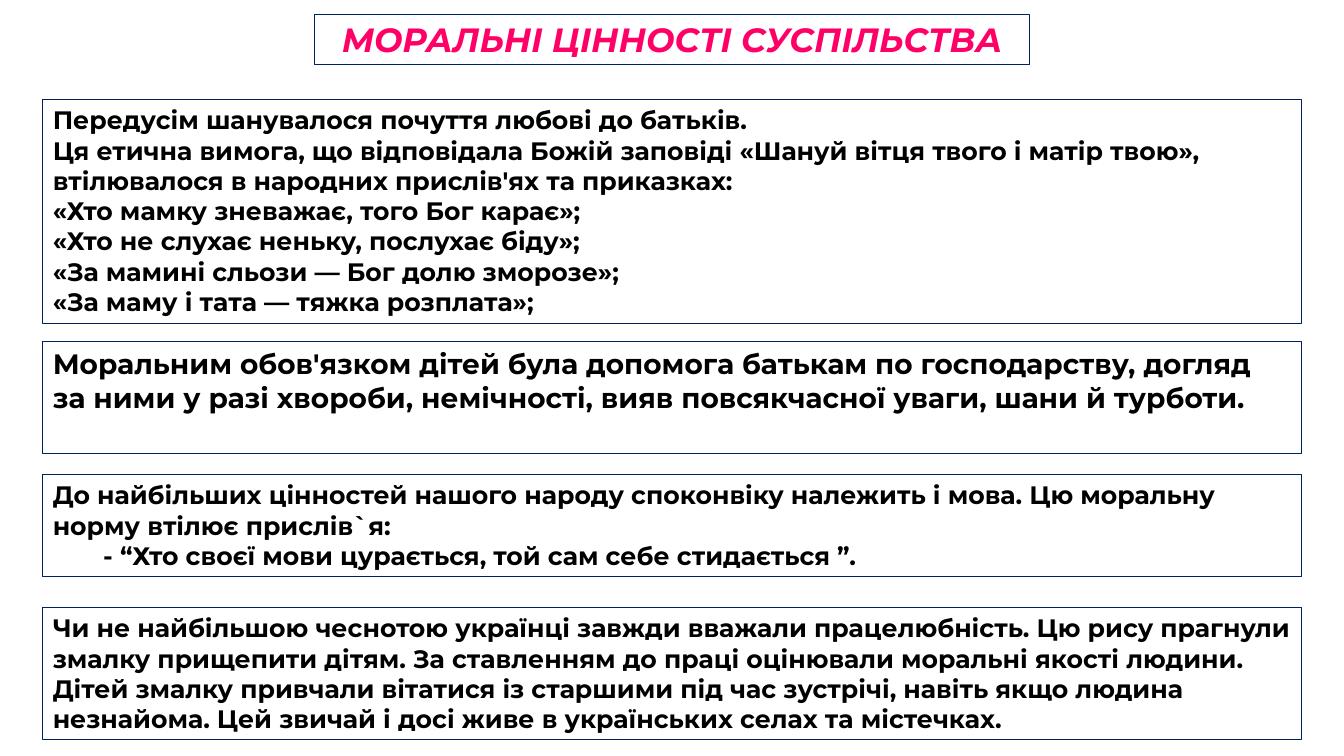
import pptx
import pptx.util
import pptx.dml.color
import pptx.enum.shapes
import pptx.enum.text

COLORS = {"paper": "FFFFFF", "border": "002060", "title": "FF0066", "text": "000000"}
FONT = "Montserrat"
SLIDE_W, SLIDE_H = 13.33, 7.5
QUOTE_INDENT = 0.5

TITLE = "МОРАЛЬНІ ЦІННОСТІ СУСПІЛЬСТВА"
TITLE_TOP, TITLE_W, TITLE_H = 0.14, 7.09, 0.5
PANEL_W = 12.48

# top, height, text size, paragraphs as (text, left indent)
PANELS = [
    (0.99, 2.22, 18, [
        ("Передусім шанувалося почуття любові до батьків.", 0),
        ("Ця етична вимога, що відповідала Божій заповіді «Шануй вітця твого і матір твою», "
         "втілювалося в народних прислів'ях та приказках:", 0),
        ("«Хто мамку зневажає, того Бог карає»;", 0),
        ("«Хто не слухає неньку, послухає біду»;", 0),
        ("«За мамині сльози — Бог долю зморозе»;", 0),
        ("«За маму і тата — тяжка розплата»;", 0),
    ]),
    (3.39, 1.11, 20, [
        ("Моральним обов'язком дітей була допомога батькам по господарству, догляд за ними "
         "у разі хвороби, немічності, вияв повсякчасної уваги, шани й турботи.", 0),
    ]),
    (4.71, 1.01, 18, [
        ("До найбільших цінностей нашого народу споконвіку належить і мова. "
         "Цю моральну норму втілює прислів`я:", 0),
        ("- “Хто своєї мови цурається, той сам себе стидається ”.", QUOTE_INDENT),
    ]),
    (6.03, 1.31, 18, [
        ("Чи не найбільшою чеснотою українці завжди вважали працелюбність. Цю рису прагнули "
         "змалку прищепити дітям. За ставленням до праці оцінювали моральні якості людини. "
         "Дітей змалку привчали вітатися із старшими під час зустрічі, навіть якщо людина "
         "незнайома. Цей звичай і досі живе в українських селах та містечках.", 0),
    ]),
]


def rgb(name):
    return pptx.dml.color.RGBColor.from_string(COLORS[name])


def add_text(tf, paragraphs, size, color="text", italic=False, align="LEFT"):
    for i, (text, indent) in enumerate(paragraphs):
        p = tf.paragraphs[0] if i == 0 else tf.add_paragraph()
        p.alignment = getattr(pptx.enum.text.PP_ALIGN, align)
        if indent:
            p._p.get_or_add_pPr().set("marL", str(pptx.util.Inches(indent)))
        r = p.add_run()
        r.text = text
        r.font.name = FONT
        r.font.size = pptx.util.Pt(size)
        r.font.bold = True
        r.font.italic = italic
        r.font.color.rgb = rgb(color)


def add_panel(slide, top, width, height, wrap=True):
    """Add a bordered box centred across the slide and return its text frame."""
    left = (SLIDE_W - width) / 2
    sp = slide.shapes.add_shape(
        pptx.enum.shapes.MSO_SHAPE.RECTANGLE,
        *(pptx.util.Inches(v) for v in (left, top, width, height)))
    sp.shadow.inherit = False
    sp.fill.solid()
    sp.fill.fore_color.rgb = rgb("paper")
    sp.line.color.rgb = rgb("border")
    sp.line.width = pptx.util.Pt(0.75)
    tf = sp.text_frame
    tf.word_wrap = wrap
    tf.vertical_anchor = pptx.enum.text.MSO_ANCHOR.TOP
    return tf


def main():
    prs = pptx.Presentation()
    prs.slide_width = pptx.util.Inches(SLIDE_W)
    prs.slide_height = pptx.util.Inches(SLIDE_H)
    slide = prs.slides.add_slide(prs.slide_layouts[6])
    for top, height, size, paragraphs in PANELS:
        add_text(add_panel(slide, top, PANEL_W, height), paragraphs, size)
    title = add_panel(slide, TITLE_TOP, TITLE_W, TITLE_H, wrap=False)
    add_text(title, [(TITLE, 0)], 24, color="title", italic=True, align="CENTER")
    prs.save("out.pptx")


if __name__ == "__main__":
    main()
